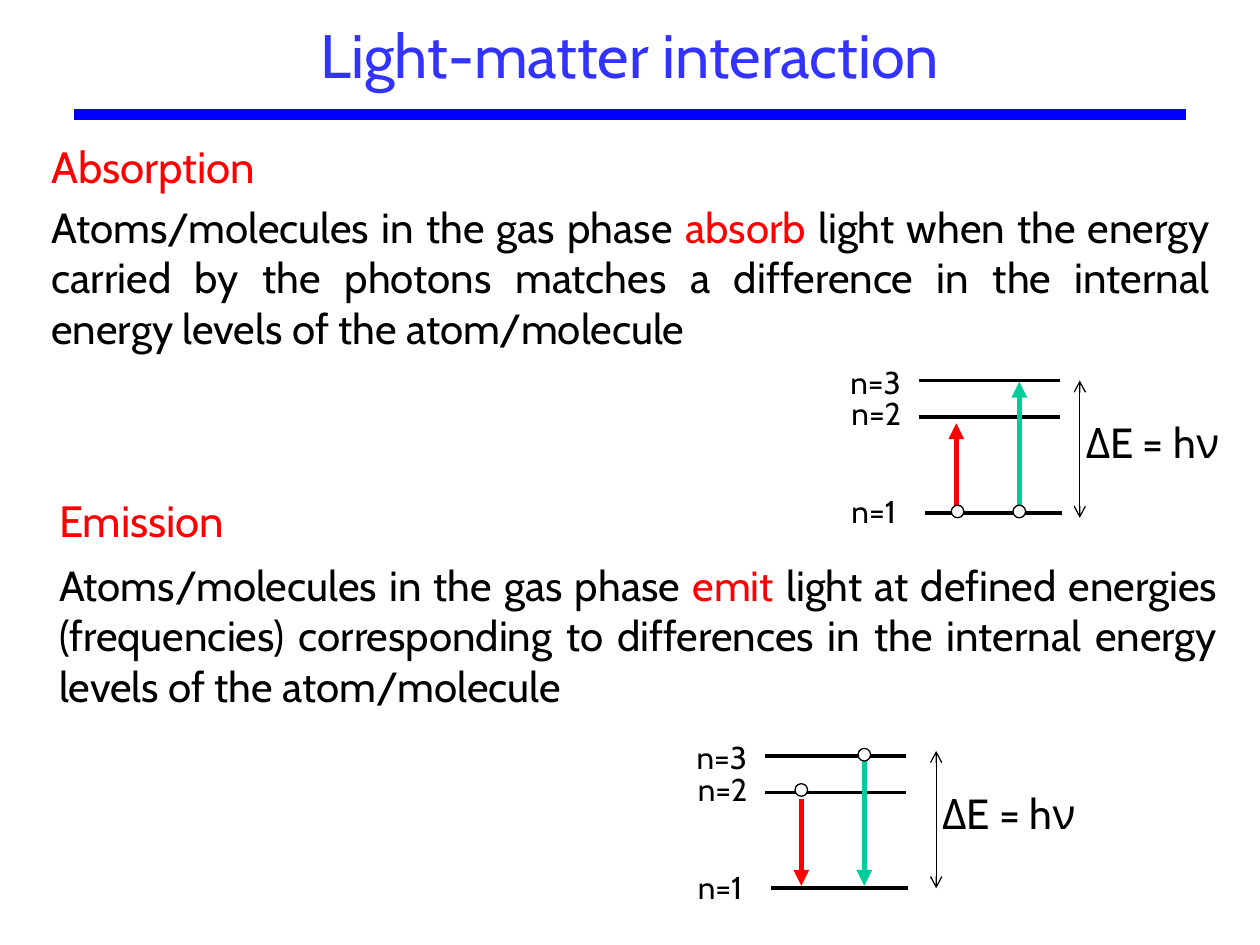
from dataclasses import dataclass

from pptx import Presentation
from pptx.dml.color import RGBColor
from pptx.enum.shapes import MSO_CONNECTOR, MSO_SHAPE
from pptx.enum.text import MSO_ANCHOR, MSO_AUTO_SIZE, PP_ALIGN
from pptx.oxml.ns import qn
from pptx.util import Inches, Pt
from lxml.etree import SubElement

FONT = "Cabin"
COLORS = {
    "title": "3333FF", "rule": "0000FF", "black": "000000",
    "red": "FF0000", "green": "00CC99", "white": "FFFFFF",
}
DOT = 0.1


@dataclass
class Section:
    heading: str
    left: float
    heading_top: float
    body_top: float
    body: list[tuple[str, str]]  # (text, colour)


@dataclass
class Transition:
    x: float
    start: float
    end: float
    color: str
    dot: tuple[float, float]


@dataclass
class Diagram:
    left: float
    top: float
    energy: tuple[float, float]  # top of the ΔE arrow
    transitions: list[Transition]


@dataclass
class Level:
    name: str
    x: float
    y: float
    width: float
    label: tuple[float, float]


# Level and transition positions are measured from the left end of n=3
LEVELS = [
    Level("n=1", 0.05, 1.05, 1.09, (-0.63, 0.84)),
    Level("n=2", 0, 0.29, 1.12, (-0.63, 0.06)),
    Level("n=3", 0, 0, 1.12, (-0.64, -0.19)),
]

DIAGRAMS = [
    Diagram(7.29, 3.02, (1.28, 0), [
        Transition(0.3, 1.03, 0.34, "red", (0.26, 0.99)),
        Transition(0.8, 1.03, 0.01, "green", (0.75, 0.99)),
    ]),
    Diagram(6.07, 6, (1.36, -0.04), [
        Transition(0.29, 0.34, 1.03, "red", (0.24, 0.22)),
        Transition(0.79, 0.01, 1.03, "green", (0.74, -0.06)),
    ]),
]

SECTIONS = [
    Section("Absorption", 0.31, 1.06, 1.55, [
        ("Atoms/molecules in the gas phase ", "black"),
        ("absorb", "red"),
        (" light when the energy carried by the photons matches a difference "
         "in the internal energy levels of the atom/molecule", "black"),
    ]),
    Section("Emission", 0.37, 3.87, 4.39, [
        ("Atoms/molecules in the gas phase ", "black"),
        ("emit", "red"),
        (" light at defined energies (frequencies) corresponding to differences "
         "in the internal energy levels of the atom/molecule", "black"),
    ]),
]


def rgb(name: str) -> RGBColor:
    return RGBColor.from_string(COLORS[name])


def format_run(r, size: float, color: str) -> None:
    r.font.name = FONT
    r.font.size = Pt(size)
    r.font.color.rgb = rgb(color)


def add_text(s, box: tuple, runs: list[tuple[str, str]], size: float,
             wrap: bool = True, align=PP_ALIGN.LEFT) -> None:
    sp = s.shapes.add_textbox(*map(Inches, box))
    tf = sp.text_frame
    tf.word_wrap = wrap
    tf.auto_size = MSO_AUTO_SIZE.SHAPE_TO_FIT_TEXT
    p = tf.paragraphs[0]
    p.alignment = align
    for text, color in runs:
        r = p.add_run()
        r.text = text
        format_run(r, size, color)


def add_line(s, start: tuple, end: tuple, color: str, width: float,
             head: str = "", tail: str = "") -> None:
    sp = s.shapes.add_connector(
        MSO_CONNECTOR.STRAIGHT, *map(Inches, (*start, *end)))
    sp.line.color.rgb = rgb(color)
    sp.line.width = Pt(width)
    ln = sp.line._get_or_add_ln()
    for tag, kind in (("a:headEnd", head), ("a:tailEnd", tail)):
        if kind:
            SubElement(ln, qn(tag)).set("type", kind)
    SubElement(sp._element.spPr, qn("a:effectLst"))


def add_dot(s, x: float, y: float) -> None:
    sp = s.shapes.add_shape(
        MSO_SHAPE.OVAL, *map(Inches, (x, y, DOT, DOT)))
    sp.shadow.inherit = False
    sp.fill.solid()
    sp.fill.fore_color.rgb = rgb("white")
    sp.line.color.rgb = rgb("black")
    sp.line.width = Pt(0.75)


def add_diagram(s, d: Diagram) -> None:
    def at(x: float, y: float) -> tuple[float, float]:
        return d.left + x, d.top + y

    # Energy levels with their labels
    for lv in LEVELS:
        add_line(s, at(lv.x, lv.y), at(lv.x + lv.width, lv.y), "black", 2.25)
        add_text(s, (*at(*lv.label), 0.66, 0.4), [(lv.name, "black")], 18,
                 wrap=False)

    # Transitions, with the electrons on top
    for t in d.transitions:
        add_line(s, at(t.x, t.start), at(t.x, t.end), t.color, 3,
                 tail="triangle")
        add_dot(s, *at(*t.dot))

    # Energy difference
    x, y = d.energy
    add_text(s, (*at(x - 0.05, y + 0.24), 1.4, 0.5), [("ΔE = hν", "black")], 24,
             wrap=False)
    add_line(s, at(x, y), at(x, y + 1.09), "black", 0.75, "arrow", "arrow")


def add_section(s, sec: Section) -> None:
    add_text(s, (sec.left, sec.heading_top, 3.69, 0.52),
             [(sec.heading, "red")], 25)
    add_text(s, (sec.left, sec.body_top, 9.39, 1.31), sec.body, 24,
             align=PP_ALIGN.JUSTIFY)


def add_title(s, text: str) -> None:
    sp = s.shapes.title
    sp.left, sp.top, sp.width, sp.height = map(Inches, (0.69, -0.3, 8.62, 1.45))
    tf = sp.text_frame
    tf.text = text
    tf.auto_size = MSO_AUTO_SIZE.NONE
    tf.vertical_anchor = MSO_ANCHOR.MIDDLE
    p = tf.paragraphs[0]
    p.alignment = PP_ALIGN.CENTER
    format_run(p.runs[0], 35, "title")


def main() -> None:
    prs = Presentation()
    prs.slide_width, prs.slide_height = Inches(10), Inches(7.5)
    s = prs.slides.add_slide(prs.slide_layouts[5])

    # Title and rule
    add_title(s, "Light-matter interaction")
    add_line(s, (0.59, 0.91), (9.41, 0.91), "rule", 6)

    for d in DIAGRAMS:
        add_diagram(s, d)
    for sec in SECTIONS:
        add_section(s, sec)

    prs.save("out.pptx")


if __name__ == "__main__":
    main()
